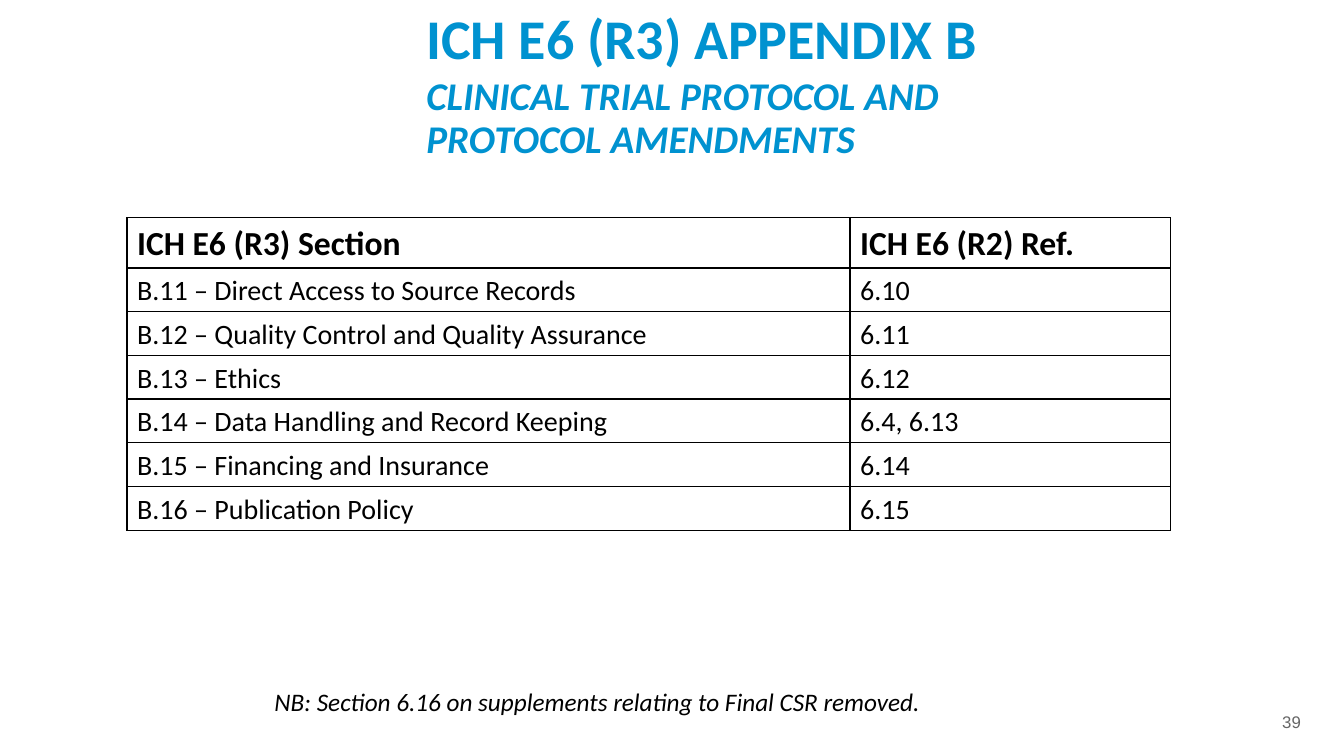
from dataclasses import dataclass

from lxml.etree import SubElement
from pptx import Presentation
from pptx.dml.color import RGBColor
from pptx.enum.text import MSO_ANCHOR, MSO_AUTO_SIZE, PP_ALIGN
from pptx.oxml.ns import qn
from pptx.util import Inches, Pt


@dataclass(frozen=True)
class Theme:
    heading_font: str = "Calibri"
    number_font: str = "Arial"
    accent: str = "0092D0"
    ink: str = "000000"
    muted: str = "666666"
    title_size: int = 40
    subtitle_size: int = 28
    header_size: int = 24
    body_size: int = 20
    note_size: int = 18
    number_size: int = 12
    border_width: int = 1


def write(para, text, *, size, color, font, bold=False, italic=False,
          line_spacing=None, space_before=0):
    para.alignment = PP_ALIGN.LEFT
    para.space_before = Pt(space_before)
    if line_spacing:
        para.line_spacing = Pt(line_spacing)
    span = para.add_run()
    span.text = text
    span.font.size = Pt(size)
    span.font.name = font
    span.font.bold = bold
    span.font.italic = italic
    span.font.color.rgb = RGBColor.from_string(color)


def draw_borders(cell, color, width):
    properties = cell._tc.get_or_add_tcPr()
    for side in ("lnL", "lnR", "lnT", "lnB"):
        line = SubElement(properties, qn(f"a:{side}"), w=str(Pt(width)))
        fill = SubElement(line, qn("a:solidFill"))
        SubElement(fill, qn("a:srgbClr"), val=color)


class SlideBuilder:
    """Adds styled elements; places and lengths are percent of the slide."""

    def __init__(self, deck, theme):
        self.deck = deck
        self.theme = theme
        self.page = deck.slides.add_slide(deck.slide_layouts[5])

    def across(self, share):
        return round(self.deck.slide_width * share / 100)

    def down(self, share):
        return round(self.deck.slide_height * share / 100)

    def area(self, left, top, width, height):
        return self.across(left), self.down(top), self.across(width), self.down(height)

    def prepare(self, box, left_margin=0.0, top_margin=0.0):
        frame = box.text_frame
        frame.word_wrap = True
        frame.auto_size = MSO_AUTO_SIZE.NONE
        frame.vertical_anchor = MSO_ANCHOR.TOP
        frame.margin_left, frame.margin_top = Inches(left_margin), Inches(top_margin)
        frame.margin_right = frame.margin_bottom = 0
        return frame

    def title(self, heading, subtitle, place):
        theme = self.theme
        box = self.page.shapes.title
        box.left, box.top, box.width, box.height = self.area(*place)
        frame = self.prepare(box, 0.01, 0.02)
        write(frame.paragraphs[0], heading, size=theme.title_size, color=theme.accent,
              font=theme.heading_font, bold=True, line_spacing=47.2)
        write(frame.add_paragraph(), subtitle, size=theme.subtitle_size,
              color=theme.accent, font=theme.heading_font, bold=True, italic=True,
              line_spacing=31.2, space_before=2.2)

    def text(self, text, place, left_margin=0.0, top_margin=0.0, **style):
        box = self.page.shapes.add_textbox(*self.area(*place))
        frame = self.prepare(box, left_margin, top_margin)
        write(frame.paragraphs[0], text, **style)

    def table(self, rows, left, top, columns, header_height, row_height):
        theme = self.theme
        height = header_height + row_height * (len(rows) - 1)
        place = self.area(left, top, sum(columns), height)
        table = self.page.shapes.add_table(len(rows), len(columns), *place).table
        table.first_row = table.horz_banding = False
        for column, share in zip(table.columns, columns):
            column.width = self.across(share)
        for index, values in enumerate(rows):
            is_header = index == 0
            table.rows[index].height = self.down(header_height if is_header else row_height)
            for cell, value in zip(table.rows[index].cells, values):
                cell.margin_left, cell.margin_top = Inches(0.1), Inches(0.06)
                cell.margin_right = cell.margin_bottom = 0
                draw_borders(cell, theme.ink, theme.border_width)
                cell.fill.background()
                write(cell.text_frame.paragraphs[0], value, color=theme.ink,
                      size=theme.header_size if is_header else theme.body_size,
                      font=theme.heading_font, bold=is_header)


SECTIONS = [
    ("ICH E6 (R3) Section", "ICH E6 (R2) Ref."),
    ("B.11 – Direct Access to Source Records", "6.10"),
    ("B.12 – Quality Control and Quality Assurance", "6.11"),
    ("B.13 – Ethics", "6.12"),
    ("B.14 – Data Handling and Record Keeping", "6.4, 6.13"),
    ("B.15 – Financing and Insurance", "6.14"),
    ("B.16 – Publication Policy", "6.15"),
]


def main():
    deck = Presentation()
    deck.slide_width, deck.slide_height = Inches(13.33), Inches(7.5)
    theme = Theme()
    slide = SlideBuilder(deck, theme)
    slide.title("ICH E6 (R3) APPENDIX B",
                "CLINICAL TRIAL PROTOCOL AND PROTOCOL AMENDMENTS",
                (31.65, 0.4, 42.85, 20.95))
    slide.text("39", (95.1, 94.15, 2.1, 2.8), left_margin=0.04,
               size=theme.number_size, color=theme.muted, font=theme.number_font,
               line_spacing=14.2)
    slide.table(SECTIONS, left=9.45, top=28.8, columns=(53.8, 23.85),
                header_height=6.65, row_height=5.78)
    slide.text("NB: Section 6.16 on supplements relating to Final CSR removed.",
               (20.35, 90.55, 48.9, 4.4), left_margin=0.01, top_margin=0.02,
               size=theme.note_size, color=theme.ink, font=theme.heading_font,
               italic=True)
    deck.save("out.pptx")


if __name__ == "__main__":
    main()
